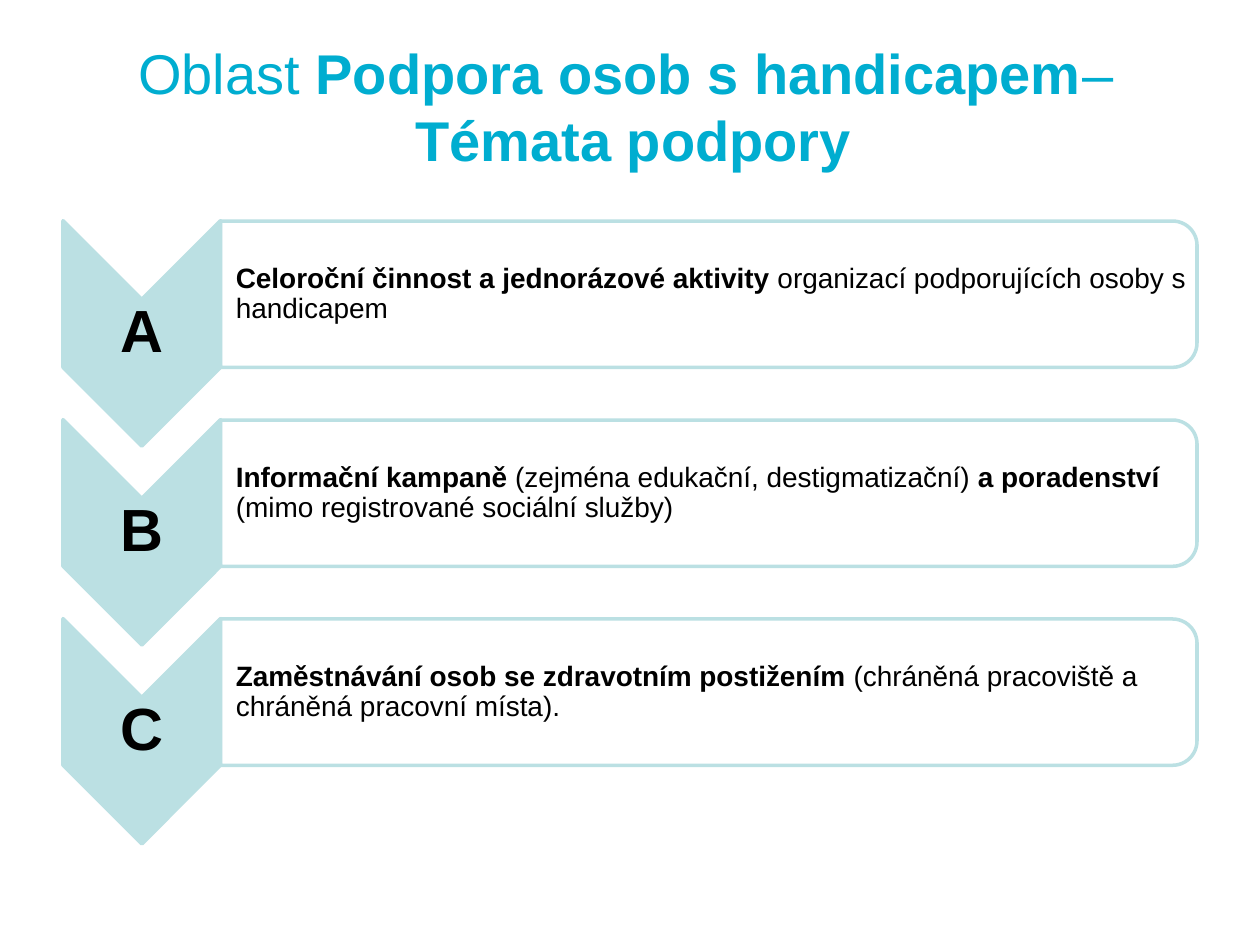
from lxml.etree import SubElement
from pptx import Presentation
from pptx.dml.color import RGBColor
from pptx.enum.shapes import MSO_SHAPE as Shape
from pptx.enum.text import MSO_ANCHOR as Anchor, PP_ALIGN as Align
from pptx.oxml.ns import qn
from pptx.util import Pt

COLORS = {"title": "00ADD0", "accent": "BBE0E3", "panel": "FFFFFF", "text": "000000"}
FONT = "Arial"

TITLE = [("Oblast ", False), ("Podpora osob s handicapem", True), ("– ", False),
         ("\n", False), ("Témata podpory", True)]
TOPICS = {
    "A": [("Celoroční činnost a jednorázové aktivity ", True),
          ("organizací podporujících osoby s handicapem", False)],
    "B": [("Informační kampaně", True),
          (" (zejména edukační, destigmatizační) ", False),
          ("a poradenství", True),
          (" (mimo registrované sociální služby)", False)],
    "C": [("Zaměstnávání osob se zdravotním postižením ", True),
          ("(chráněná pracoviště a chráněná pracovní místa).", False)],
}
FIRST_ROW, ROW_STEP = 168.1, 113.7


class SlideBuilder:
    def __init__(self, slide):
        self.slide = slide

    def rotated_shape(self, kind, center_x, center_y, width, height, fill, opacity=100):
        shape = self.slide.shapes.add_shape(
            kind, Pt(center_x - width / 2), Pt(center_y - height / 2), Pt(width), Pt(height))
        shape.rotation = 90
        shape.shadow.inherit = False
        shape.fill.solid()
        shape.fill.fore_color.rgb = RGBColor.from_string(COLORS[fill])
        shape.line.color.rgb = RGBColor.from_string(COLORS["accent"])
        shape.line.width = Pt(2)
        if opacity < 100:
            color = shape.fill._xPr.find(qn("a:solidFill"))[0]
            SubElement(color, qn("a:alpha"), val=str(opacity * 1000))

    def text(self, pieces, left, center_y, width, height, size, color="text",
             align=Align.CENTER, spacing=None, insets=(7.2, 3.6, 7.2, 3.6)):
        box = self.slide.shapes.add_textbox(
            Pt(left), Pt(center_y - height / 2), Pt(width), Pt(height))
        frame = box.text_frame
        frame.word_wrap = True
        frame.vertical_anchor = Anchor.MIDDLE
        frame.margin_left, frame.margin_top, frame.margin_right, frame.margin_bottom = map(Pt, insets)
        paragraph = frame.paragraphs[0]
        paragraph.alignment = align
        paragraph.line_spacing = spacing
        for words, bold in pieces:
            if words == "\n":
                paragraph.add_line_break()
                continue
            run = paragraph.add_run()
            run.text = words
            run.font.name = FONT
            run.font.size = Pt(size)
            run.font.bold = bold
            run.font.color.rgb = RGBColor.from_string(COLORS[color])

    def topic(self, letter, description, center_y):
        marker_y = center_y + 22.4
        self.rotated_shape(Shape.CHEVRON, 81, marker_y, 128.8, 90, "accent")
        self.text([(letter, True)], 36, marker_y, 90, 38.8, 34,
                  spacing=0.9, insets=(1.5, 1.5, 1.5, 1.5))
        self.rotated_shape(Shape.ROUND_2_SAME_RECTANGLE, 405, center_y, 83.6, 558, "panel", 90)
        self.text(description, 126, center_y, 553.9, 75.6, 16, align=Align.LEFT,
                  spacing=0.9, insets=(8.8, 0.8, 0.8, 0.8))


def main():
    presentation = Presentation()
    presentation.slide_width, presentation.slide_height = Pt(720), Pt(540)
    builder = SlideBuilder(presentation.slides.add_slide(presentation.slide_layouts[6]))
    builder.text(TITLE, 20, 60.2, 684, 90, 32, color="title")
    for row, (letter, description) in enumerate(TOPICS.items()):
        builder.topic(letter, description, FIRST_ROW + row * ROW_STEP)
    presentation.save("out.pptx")


if __name__ == "__main__":
    main()
